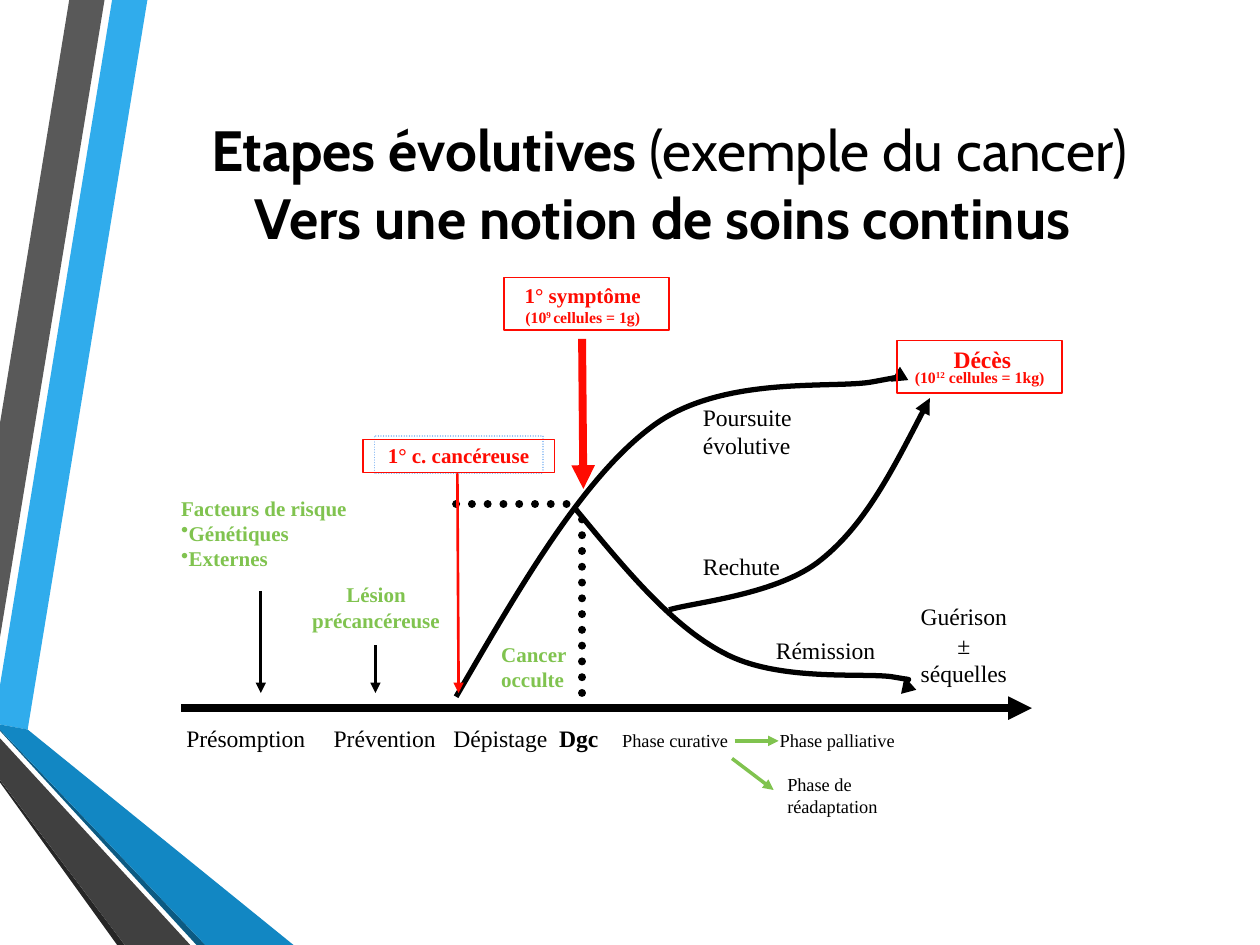
import pptx
import pptx.dml.color
import pptx.enum.dml
import pptx.enum.shapes
import pptx.enum.text
import pptx.oxml.ns
import pptx.util
from lxml import etree

Inches = pptx.util.Inches
RGBColor = pptx.dml.color.RGBColor
qn = pptx.oxml.ns.qn

BLACK = RGBColor(0x00, 0x00, 0x00)
RED = RGBColor(0xFF, 0x0B, 0x02)
GREEN = RGBColor(0x80, 0xC3, 0x4F)
PALE_BLUE = RGBColor(0x82, 0xB6, 0xF4)

LEFT = pptx.enum.text.PP_ALIGN.LEFT
CENTER = pptx.enum.text.PP_ALIGN.CENTER

RIBBONS = [
    ("30ACEC", [(0, 5.44), (0, 5.75), (0.22, 5.79), (1.17, 0), (0.89, 0)]),
    ("595959", [(0.83, 0), (0.55, 0), (0, 3.36), (0, 5.06)]),
    ("262626", [(0, 6.19), (0, 6.21), (0.93, 7.5), (0.99, 7.5)]),
    ("0C5A82", [(0, 5.79), (0, 5.8), (1.56, 7.5), (1.63, 7.5)]),
    ("1287C3", [(0, 5.79), (1.63, 7.5), (2.33, 7.5), (0.22, 5.79), (0, 5.75)]),
    ("404040", [(0, 6.19), (0.99, 7.5), (1.51, 7.5), (0, 5.86)]),
]
PROGRESSION = [(3.62, 5.53), (4.12, 4.67), (4.62, 3.8), (5.17, 3.39), (5.72, 2.97),
               (6.62, 3.09), (6.93, 3.03), (7.25, 2.97), (7.16, 3), (7.07, 3.03)]
REMISSION = [(4.56, 4.03), (4.94, 4.49), (5.32, 4.96), (5.74, 5.18), (6.16, 5.41),
             (6.83, 5.34), (7.07, 5.37), (7.31, 5.41), (7.25, 5.39), (7.18, 5.37)]
RELAPSE = [(7.38, 3.16), (7.12, 3.66), (6.87, 4.16), (6.52, 4.44),
           (6.18, 4.72), (5.51, 4.78), (5.31, 4.84)]
PHASE_TABS = [1.17, 2.12, 2.96, 3.46, 4.71]


def add_run(paragraph, text, size=13.5, color=BLACK, bold=False, font="Times New Roman", raised=False):
    run = paragraph.add_run()
    run.text = text
    run.font.name = font
    run.font.size = pptx.util.Pt(size)
    run.font.bold = bold
    run.font.color.rgb = color
    if raised:
        run.font._element.set("baseline", "30000")


class SlideBuilder:
    """Draw styled elements on the current slide."""

    def __init__(self, slide):
        self.shapes = slide.shapes

    def style_line(self, shape, color, width, dotted=False, head=False, tail=False):
        shape.line.color.rgb = color
        shape.line.width = pptx.util.Pt(width)
        line = shape.line._get_or_add_ln()
        if dotted:
            shape.line.dash_style = pptx.enum.dml.MSO_LINE.ROUND_DOT
            line.set("cap", "rnd")
        for tag, wanted in (("a:headEnd", head), ("a:tailEnd", tail)):
            if wanted:
                etree.SubElement(line, qn(tag), type="triangle")

    def line(self, start, end, color=BLACK, width=1.5, dotted=False, tail=True):
        points = [Inches(value) for value in (*start, *end)]
        connector = self.shapes.add_connector(pptx.enum.shapes.MSO_CONNECTOR.STRAIGHT, *points)
        self.style_line(connector, color, width, dotted, tail=tail)
        etree.SubElement(connector._element.spPr, qn("a:effectLst"))

    def outline(self, points, close):
        start, *others = [(Inches(x), Inches(y)) for x, y in points]
        builder = self.shapes.build_freeform(*start)
        builder.add_line_segments(others, close=close)
        shape = builder.convert_to_shape()
        shape.shadow.inherit = False
        return shape

    def ribbon(self, color, points):
        shape = self.outline(points, True)
        shape.fill.solid()
        shape.fill.fore_color.rgb = RGBColor.from_string(color)
        shape.line.fill.background()

    def curve(self, points, **arrow):
        shape = self.outline(points, False)
        shape.fill.background()
        self.style_line(shape, BLACK, 3, **arrow)
        segments = list(shape._element.iter(qn("a:lnTo")))
        for index in range(0, len(segments), 3):
            bezier = etree.Element(qn("a:cubicBezTo"))
            segments[index].addprevious(bezier)
            for segment in segments[index:index + 3]:
                bezier.append(segment[0])
                segment.getparent().remove(segment)

    def frame(self, box, color=RED, dotted=False):
        shape = self.shapes.add_shape(
            pptx.enum.shapes.MSO_SHAPE.RECTANGLE, *map(Inches, box))
        shape.shadow.inherit = False
        shape.fill.background()
        self.style_line(shape, color, 0.75, dotted)
        return shape

    def text(self, box, paragraphs, align=LEFT, wrap=False, shape=None, bullets=(), tabs=(), **style):
        shape = shape or self.shapes.add_textbox(*map(Inches, box))
        frame = shape.text_frame
        frame.word_wrap = wrap
        frame.vertical_anchor = pptx.enum.text.MSO_ANCHOR.TOP
        for index, runs in enumerate(paragraphs):
            paragraph = frame.add_paragraph() if index else frame.paragraphs[0]
            paragraph.alignment = align
            properties = paragraph._p.get_or_add_pPr()
            if index in bullets:
                etree.SubElement(properties, qn("a:buChar"), char="•")
            if tabs:
                tab_list = etree.SubElement(properties, qn("a:tabLst"))
                for position in tabs:
                    etree.SubElement(tab_list, qn("a:tab"), pos=str(Inches(position)), algn="l")
            for run in [(runs, {})] if isinstance(runs, str) else runs:
                add_run(paragraph, run[0], **{**style, **run[1]})


def main():
    presentation = pptx.Presentation()
    presentation.slide_width, presentation.slide_height = Inches(10), Inches(7.5)
    builder = SlideBuilder(presentation.slides.add_slide(presentation.slide_layouts[6]))
    green = {"size": 12, "color": GREEN, "bold": True}
    red = {"size": 12, "color": RED, "bold": True}
    small = {"size": 10.5}

    for color, points in RIBBONS:
        builder.ribbon(color, points)

    builder.text((1.38, 5.7, 7.12, 0.33), [[
        ("Présomption\tPrévention\tDépistage\t", {}), ("Dgc\t", {"bold": True}),
        ("Phase curative\tPhase palliative", small)]], wrap=True, tabs=PHASE_TABS)
    builder.text((6.15, 6.09, 1.46, 0.27), ["Phase de réadaptation"], **small)
    builder.text((1.34, 3.88, 1.53, 0.71), ["Facteurs de risque", "Génétiques", "Externes"],
                 bullets=(1, 2), **green)
    builder.text((2.37, 4.57, 1.23, 0.5), ["Lésion", "précancéreuse"], CENTER, **green)
    builder.text((3.88, 5.04, 0.73, 0.5), ["Cancer", "occulte"], **green)
    builder.text((5.48, 3.15, 0.92, 0.56), ["Poursuite", "évolutive"])
    builder.text((6.06, 5, 1, 0.33), ["Rémission"])
    builder.text((5.48, 4.33, 0.82, 0.33), ["Rechute"])
    builder.text((7.2, 4.73, 0.9, 0.78), ["Guérison", "±", "séquelles"], CENTER)

    builder.line((4.62, 2.69), (4.63, 3.88), RED, 4.5)
    builder.line((2.98, 5.12), (2.98, 5.5))
    builder.line((2.07, 4.69), (2.07, 5.5))
    for start in ((3.62, 4), (4.62, 5.5)):
        builder.line(start, (4.62, 4), width=4.5, dotted=True, tail=False)
    builder.line((1.44, 5.62), (8.19, 5.62), width=4.5)
    builder.curve(PROGRESSION, tail=True)
    builder.curve(REMISSION, tail=True)
    builder.curve(RELAPSE, head=True)
    builder.line((3.63, 3.75), (3.64, 5.5), RED)

    first_cell = builder.frame((2.97, 3.46, 1.34, 0.3), PALE_BLUE, dotted=True)
    builder.text(None, ["1° c. cancéreuse"], CENTER, shape=first_cell, **red)
    builder.frame((2.88, 3.49, 1.52, 0.26))

    note = {"size": 9}
    exponent = {"size": 9, "raised": True}
    builder.text((4, 2.19, 1.25, 0.45), [
        "1° symptôme", [("(10", note), ("9 ", exponent), ("cellules = 1g)", note)]],
        CENTER, wrap=True, **red)
    builder.frame((4, 2.2, 1.31, 0.42))
    builder.line((5.83, 5.88), (6.18, 5.88), GREEN, 2)
    builder.line((5.81, 6.02), (6.14, 6.27), GREEN, 2)
    builder.text((7.47, 2.69, 0.67, 0.33), ["Décès"], color=RED, bold=True)
    builder.text((7.15, 2.87, 1.25, 0.25), [
        [("(10", note), ("12", exponent), (" cellules = 1kg)", note)]], CENTER, **red)
    builder.frame((7.12, 2.7, 1.31, 0.42))

    builder.text((1.22, 0.86, 8.18, 1.18), [
        [("Etapes évolutives ", {"bold": True}), ("(exemple du cancer)", {})],
        [("Vers une notion de soins continus ", {"bold": True})]],
        CENTER, wrap=True, size=32.4, font="Cabin")

    presentation.save("out.pptx")


if __name__ == "__main__":
    main()
